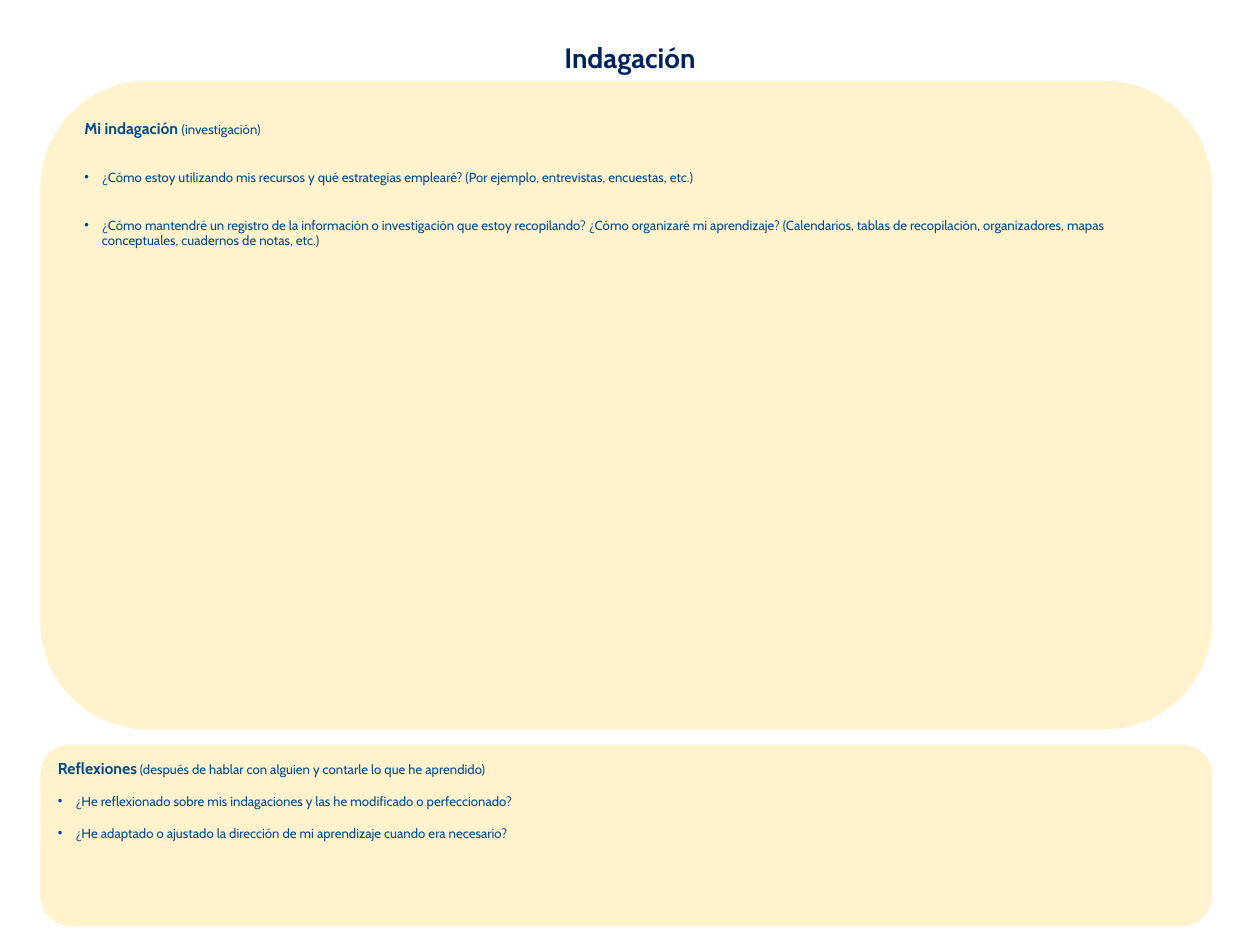
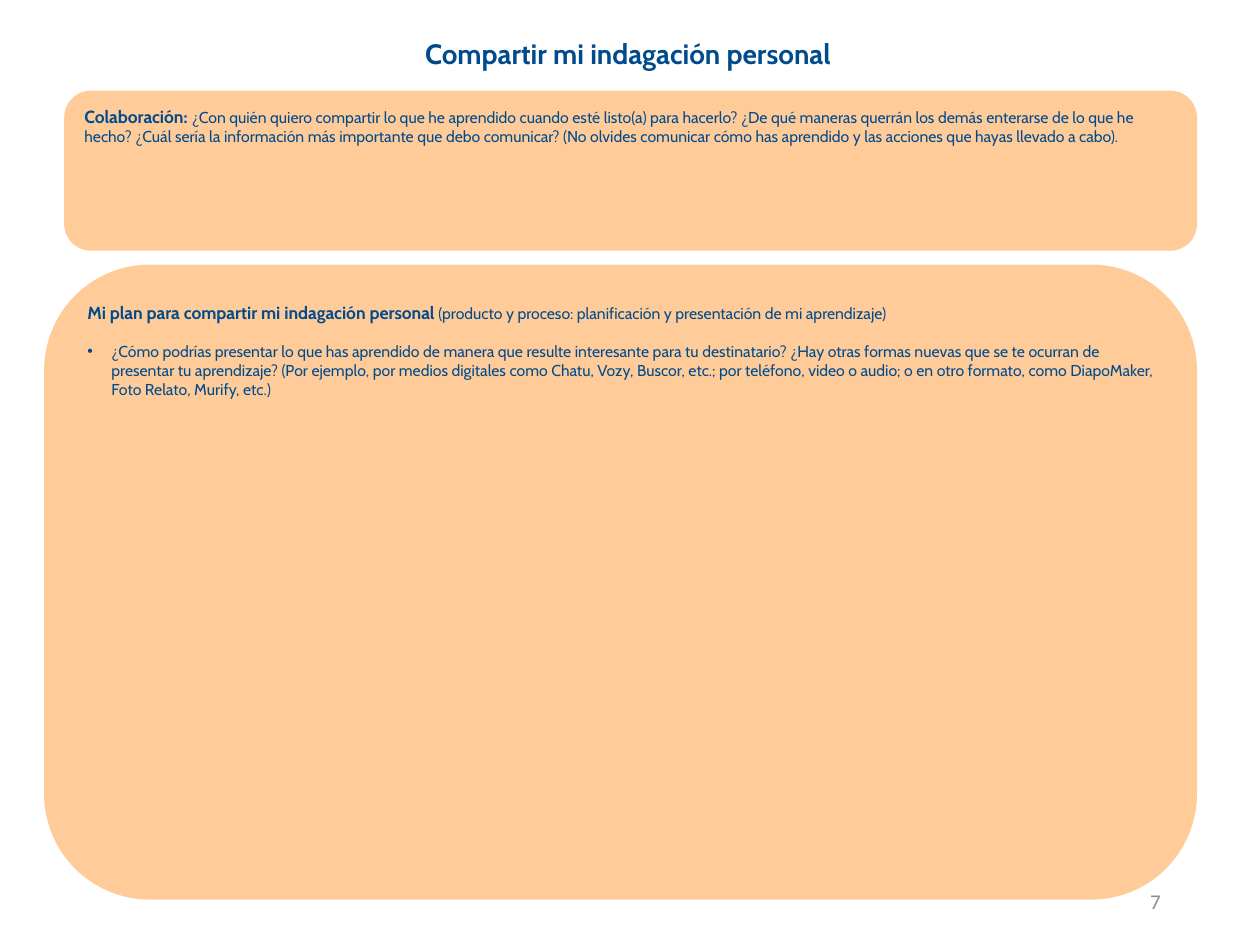
"""Builds two worksheet slides about a personal inquiry."""
from lxml import etree
from pptx import Presentation
from pptx.dml.color import RGBColor
from pptx.enum import shapes, text
from pptx.oxml.ns import qn
from pptx.util import Inches, Pt

NAVY, BLUE, GRAY = "002060", "004B8D", "8C8C8C"
CREAM, PEACH = "FFF2CC", "FFCC99"
FONT = "Cabin"
DEFAULT_INSETS = (0.1, 0.05)

SLIDES = [
    {
        "title": "Indagación", "title_at": (0, 0.27, 10, 0.37),
        "title_color": NAVY, "fill": CREAM, "indent": 0.14,
        "panels": [
            {"at": (0.32, 0.64, 9.3, 5.15), "gap": 18.2,
             "heading": [("Mi indagación ", 9, True), ("(investigación)", 7.5, False)],
             "bullet_size": 7.5,
             "bullets": [
                 "¿Cómo estoy utilizando mis recursos y qué estrategias emplearé? "
                 "(Por ejemplo, entrevistas, encuestas, etc.)",
                 "¿Cómo mantendré un registro de la información o investigación que "
                 "estoy recopilando? ¿Cómo organizaré mi aprendizaje? (Calendarios, "
                 "tablas de recopilación, organizadores, mapas conceptuales, "
                 "cuadernos de notas, etc.)"]},
            {"at": (0.32, 5.91, 9.3, 1.44), "gap": 9.1, "insets": (0.07, 0.04),
             "heading": [("Reflexiones", 9, True), (" ", 7.5, True),
                         ("(después de hablar con alguien y contarle lo que he "
                          "aprendido)", 7.5, False)],
             "bullet_size": 7.5,
             "bullets": [
                 "¿He reflexionado sobre mis indagaciones y las he modificado o "
                 "perfeccionado?",
                 "¿He adaptado o ajustado la dirección de mi aprendizaje cuando era "
                 "necesario?"]},
        ],
    },
    {
        "title": "Compartir mi indagación personal ", "title_at": (0.01, 0.24, 10, 0.37),
        "title_color": BLUE, "fill": PEACH, "indent": 0.19, "number": "7",
        "panels": [
            {"at": (0.51, 0.72, 8.99, 1.27),
             "heading": [("Colaboración:", 10, True), (" ", 10.5, True),
                         ("¿Con quién quiero compartir lo que he aprendido cuando esté "
                          "listo(a) para hacerlo? ¿De qué maneras querrán los demás "
                          "enterarse de lo que he hecho? ¿Cuál sería la información más "
                          "importante que debo comunicar? (No olvides comunicar cómo has "
                          "aprendido y las acciones que hayas llevado a cabo).", 9, False)]},
            {"at": (0.35, 2.1, 9.15, 5.04), "gap": 10.9,
             "heading": [("Mi plan para compartir mi indagación personal ", 10, True),
                         ("(producto y proceso: planificación y presentación de mi "
                          "aprendizaje)", 9, False)],
             "bullet_size": 9,
             "bullets": [
                 "¿Cómo podrías presentar lo que has aprendido de manera que resulte "
                 "interesante para tu destinatario? ¿Hay otras formas nuevas que se te "
                 "ocurran de presentar tu aprendizaje? (Por ejemplo, por medios digitales "
                 "como Chatu, Vozy, Buscor, etc.; por teléfono, video o audio; o en otro "
                 "formato, como DiapoMaker, Foto Relato, Murify, etc.)"]},
        ],
    },
]


def rgb(color):
    """Turns a hex string into a colour."""
    return RGBColor.from_string(color)


def box(at):
    """Converts left, top, width and height to lengths."""
    return [Inches(v) for v in at]


def set_frame(tf, anchor, insets=DEFAULT_INSETS):
    """Sets wrapping, anchor and insets of a text frame."""
    x, y = (Inches(v) for v in insets)
    values = {"word_wrap": True, "vertical_anchor": anchor,
              "margin_left": x, "margin_right": x, "margin_top": y, "margin_bottom": y}
    for name, value in values.items():
        setattr(tf, name, value)


def add_run(p, words, size, bold=False, color=BLUE, font=FONT):
    """Adds one formatted run to a paragraph."""
    r = p.add_run()
    r.text = words
    for name, value in {"name": font, "size": Pt(size), "bold": bold}.items():
        setattr(r.font, name, value)
    r.font.color.rgb = rgb(color)


def add_bullet(p, indent):
    """Gives a paragraph a hanging bullet."""
    pPr = p._p.get_or_add_pPr()
    pPr.set("marL", str(Inches(indent)))
    pPr.set("indent", str(-Inches(indent)))
    etree.SubElement(pPr, qn("a:buFont")).set("typeface", "Arial")
    etree.SubElement(pPr, qn("a:buChar")).set("char", "•")


def add_title(s, words, at, color):
    """Moves and formats the title placeholder."""
    sp = s.shapes.title
    sp.left, sp.top, sp.width, sp.height = box(at)
    tf = sp.text_frame
    set_frame(tf, text.MSO_ANCHOR.TOP)
    tf.auto_size = text.MSO_AUTO_SIZE.SHAPE_TO_FIT_TEXT
    p = tf.paragraphs[0]
    p.alignment = text.PP_ALIGN.CENTER
    add_run(p, words, 16, True, color)


def add_panel(s, panel, fill, indent):
    """Draws a rounded panel with a heading and its bullets."""
    sp = s.shapes.add_shape(shapes.MSO_SHAPE.ROUNDED_RECTANGLE, *box(panel["at"]))
    sp.shadow.inherit = False
    sp.fill.solid()
    sp.fill.fore_color.rgb = rgb(fill)
    sp.line.fill.background()
    tf = sp.text_frame
    set_frame(tf, text.MSO_ANCHOR.TOP, panel.get("insets", DEFAULT_INSETS))
    p = tf.paragraphs[0]
    p.alignment = text.PP_ALIGN.LEFT
    for words, size, bold in panel["heading"]:
        add_run(p, words, size, bold)
    for words in panel.get("bullets", []):
        p = tf.add_paragraph()
        p.alignment = text.PP_ALIGN.LEFT
        p.space_before = Pt(panel["gap"])
        add_bullet(p, indent)
        add_run(p, words, panel["bullet_size"])


def add_number(s, number):
    """Adds the page number at the bottom right."""
    tf = s.shapes.add_textbox(*box((7.06, 6.95, 2.25, 0.4))).text_frame
    set_frame(tf, text.MSO_ANCHOR.MIDDLE)
    p = tf.paragraphs[0]
    p.alignment = text.PP_ALIGN.RIGHT
    add_run(p, number, 12, color=GRAY, font="Calibri")


def main():
    """Builds and saves the slides."""
    prs = Presentation()
    prs.slide_width, prs.slide_height = Inches(10), Inches(7.5)
    for page in SLIDES:
        s = prs.slides.add_slide(prs.slide_layouts[5])
        if "number" in page:
            add_number(s, page["number"])
        add_title(s, page["title"], page["title_at"], page["title_color"])
        for panel in page["panels"]:
            add_panel(s, panel, page["fill"], page["indent"])
    prs.save("out.pptx")


if __name__ == "__main__":
    main()
